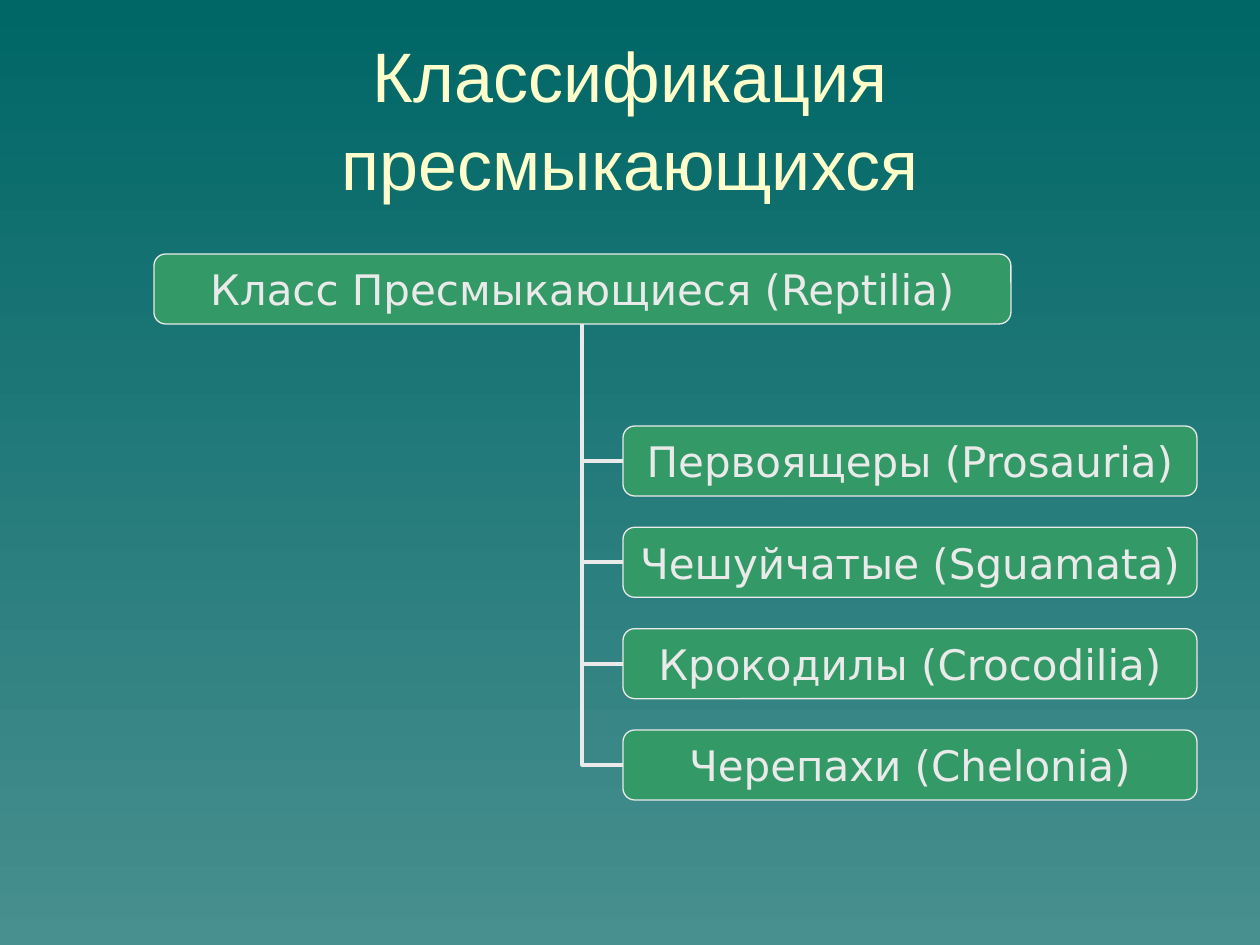
import pptx
import pptx.dml.color
import pptx.enum.shapes
import pptx.enum.text
import pptx.util
from lxml import etree

TITLE = "Классификация пресмыкающихся"
ROOT = "Класс Пресмыкающиеся (Reptilia)"
ORDERS = [
    "Первоящеры (Prosauria)",
    "Чешуйчатые (Sguamata)",
    "Крокодилы (Crocodilia)",
    "Черепахи (Chelonia)",
]

GRADIENT = [("006666", 0), ("488F8F", 1)]
BOX_FILL, LIGHT = "339966", "EAEAEA"
TITLE_FORMAT = {"size": pptx.util.Pt(40), "name": "Arial"}
BOX_FORMAT = {"size": pptx.util.Pt(24), "name": "DejaVu Sans"}

SLIDE_SIZE = (1260, 945)
TITLE_AREA = (63, 38, 1134, 157)
TITLE_MARGIN = 20
ROOT_AREA = (154, 254, 857, 70)
ORDER_LEFT, ORDER_WIDTH, ORDER_HEIGHT = 623, 574, 70
FIRST_TOP, LAST_TOP = 426, 730


def px(length):
    return pptx.util.Emu(round(length * 914400 / 126))


def rgb(value):
    return pptx.dml.color.RGBColor.from_string(value)


def format_text(paragraph, text, formats, color):
    paragraph.alignment = pptx.enum.text.PP_ALIGN.CENTER
    run = paragraph.add_run()
    run.text = text
    for name, value in formats.items():
        setattr(run.font, name, value)
    run.font.color.rgb = rgb(color)


def add_box(slide, text, area):
    box = slide.shapes.add_shape(
        pptx.enum.shapes.MSO_SHAPE.ROUNDED_RECTANGLE, *map(px, area))
    box.shadow.inherit = False
    box.fill.solid()
    box.fill.fore_color.rgb = rgb(BOX_FILL)
    box.line.color.rgb = rgb(LIGHT)
    box.line.width = pptx.util.Pt(0.75)
    frame = box.text_frame
    frame.word_wrap = False
    frame.vertical_anchor = pptx.enum.text.MSO_ANCHOR.MIDDLE
    format_text(frame.paragraphs[0], text, BOX_FORMAT, LIGHT)
    return box


def add_branch(slide, order, root):
    """Join an order's left side to the bottom of the root with one bend."""
    branch = slide.shapes.add_connector(
        pptx.enum.shapes.MSO_CONNECTOR.ELBOW,
        order.left, order.top + order.height // 2,
        root.left + root.width // 2, root.top + root.height)
    branch.begin_connect(order, 1)
    branch.end_connect(root, 2)
    branch.line.color.rgb = rgb(LIGHT)
    branch.line.width = pptx.util.Pt(2.25)
    properties = branch._element.spPr
    properties.find(pptx.oxml.ns.qn("a:prstGeom")).set("prst", "bentConnector2")
    etree.SubElement(properties, pptx.oxml.ns.qn("a:effectLst"))


def add_title(slide):
    title = slide.shapes.title
    title.left, title.top, title.width, title.height = map(px, TITLE_AREA)
    frame = title.text_frame
    frame.word_wrap = True
    frame.vertical_anchor = pptx.enum.text.MSO_ANCHOR.MIDDLE
    frame.margin_left = frame.margin_right = px(TITLE_MARGIN)
    paragraph = frame.paragraphs[0]
    paragraph.line_spacing = 1.05
    format_text(paragraph, TITLE, TITLE_FORMAT, "FFFFCC")


def main():
    presentation = pptx.Presentation()
    presentation.slide_width, presentation.slide_height = map(px, SLIDE_SIZE)
    slide = presentation.slides.add_slide(presentation.slide_layouts[5])

    background = slide.background.fill
    background.gradient()
    background.gradient_angle = 270
    for stop, (color, position) in zip(background.gradient_stops, GRADIENT):
        stop.color.rgb = rgb(color)
        stop.position = position

    add_title(slide)
    root = add_box(slide, ROOT, ROOT_AREA)
    step = (LAST_TOP - FIRST_TOP) / (len(ORDERS) - 1)
    for index, text in enumerate(ORDERS):
        top = FIRST_TOP + index * step
        order = add_box(slide, text, (ORDER_LEFT, top, ORDER_WIDTH, ORDER_HEIGHT))
        add_branch(slide, order, root)

    presentation.save("out.pptx")


if __name__ == "__main__":
    main()
